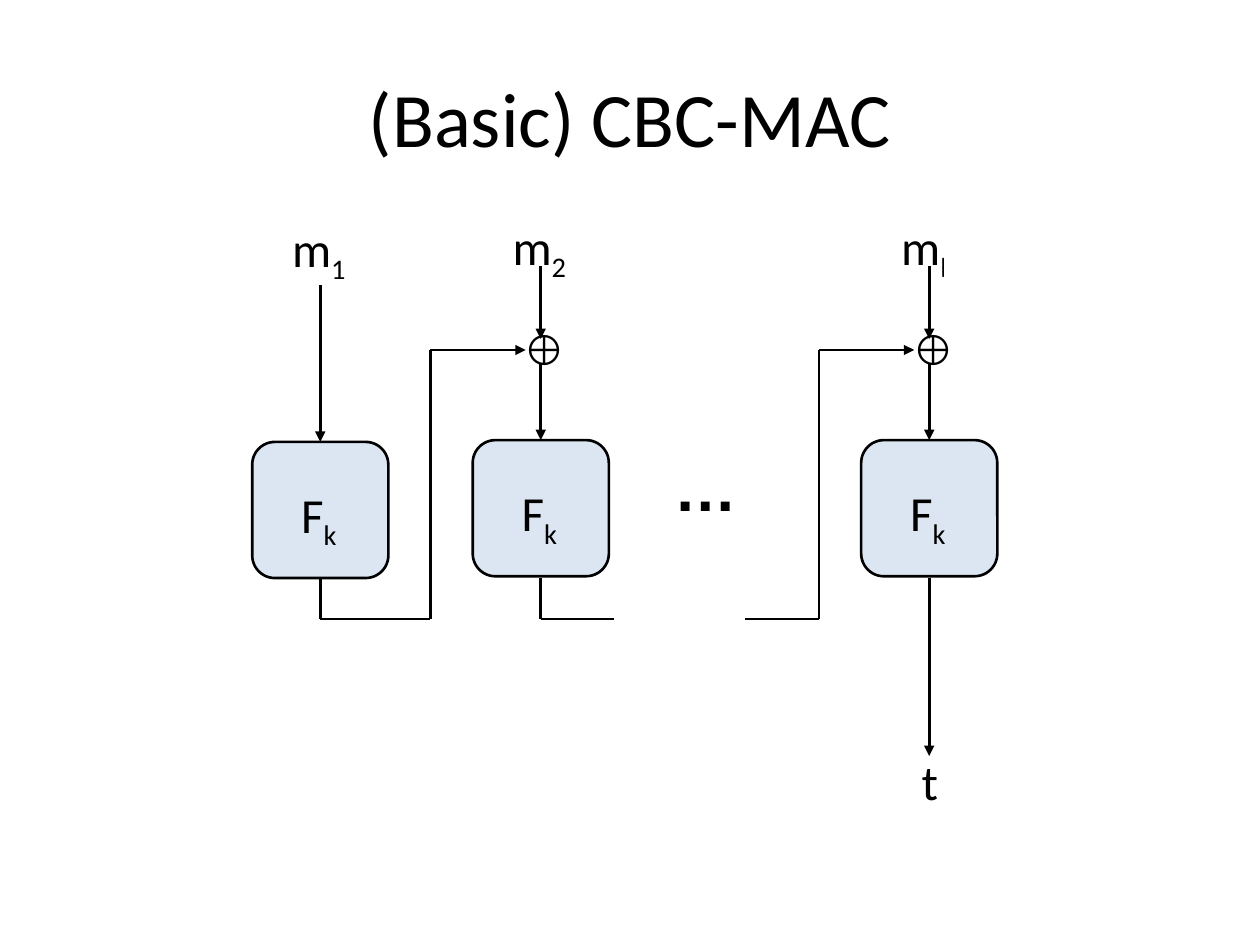
import dataclasses

import pptx
import pptx.dml.color
import pptx.enum.shapes
import pptx.enum.text
import pptx.oxml
import pptx.oxml.ns
import pptx.util

Pt = pptx.util.Pt


@dataclasses.dataclass(frozen=True)
class Theme:
    ink: str = "000000"
    block: str = "DCE6F2"
    font: str = "Calibri"
    symbol_font: str = "Arial"
    subscript_font: str = "Comic Neue"
    title: int = 44
    label: int = 28
    symbol: int = 24
    dots: int = 36
    line: float = 1.5


THEME = Theme()

# Shared geometry, in points
BLOCK = 77.8
COLUMNS = (183, 309, 531)
CHAIN_Y = 353.7
XOR_Y = 200


def color(value):
    return pptx.dml.color.RGBColor.from_string(value)


def add_span(para, text, size, font=THEME.font, bold=None, subscript=False):
    span = para.add_run()
    span.text = text
    span.font.name = font
    span.font.size = Pt(size)
    span.font.bold = bold
    span.font.color.rgb = color(THEME.ink)
    if subscript:
        span._r.get_or_add_rPr().set("baseline", "-25000")


def add_label(page, left, top, width, height, text, size=THEME.label,
              font=THEME.font, bold=None, subscript="", subscript_font=THEME.font):
    box = page.shapes.add_textbox(Pt(left), Pt(top), Pt(width), Pt(height))
    box.text_frame.word_wrap = False
    box.text_frame.auto_size = pptx.enum.text.MSO_AUTO_SIZE.SHAPE_TO_FIT_TEXT
    para = box.text_frame.paragraphs[0]
    add_span(para, text, size, font, bold)
    if subscript:
        add_span(para, subscript, size, subscript_font, subscript=True)


def add_line(page, x1, y1, x2, y2, arrow=False):
    line = page.shapes.add_connector(
        pptx.enum.shapes.MSO_CONNECTOR.STRAIGHT, Pt(x1), Pt(y1), Pt(x2), Pt(y2))
    line.line.color.rgb = color(THEME.ink)
    line.line.width = Pt(THEME.line)
    properties = line.element.spPr
    if arrow:
        outline = properties.find(pptx.oxml.ns.qn("a:ln"))
        outline.append(pptx.oxml.parse_xml(
            f'<a:tailEnd {pptx.oxml.ns.nsdecls("a")} type="triangle"/>'))
    properties.append(pptx.oxml.parse_xml(
        f'<a:effectLst {pptx.oxml.ns.nsdecls("a")}/>'))


def add_block(page, center, top):
    left = center - BLOCK / 2
    block = page.shapes.add_shape(
        pptx.enum.shapes.MSO_SHAPE.ROUNDED_RECTANGLE,
        Pt(left), Pt(top), Pt(BLOCK), Pt(BLOCK))
    block.adjustments[0] = 0.167
    block.shadow.inherit = False
    block.fill.solid()
    block.fill.fore_color.rgb = color(THEME.block)
    block.line.color.rgb = color(THEME.ink)
    block.line.width = Pt(THEME.line)
    add_label(page, left + 20.9, top + 20.9, 36, 41, "F", subscript="k")


def add_xor_stage(page, center, block_top):
    """Message arrow into the XOR symbol, then on into the block."""
    add_line(page, center, 152, center, 193.7, arrow=True)
    add_label(page, center - 16.7, 181.4, 33, 36.4, "⊕",
              THEME.symbol, THEME.symbol_font)
    add_line(page, center, 207.4, center, block_top, arrow=True)


def add_feedback(page, start, center):
    """Path from the chain line up and into the XOR of a column."""
    riser = center - 63
    add_line(page, start, CHAIN_Y, riser, CHAIN_Y)
    add_line(page, riser, CHAIN_Y, riser, XOR_Y)
    add_line(page, riser, XOR_Y, center - 8.6, XOR_Y, arrow=True)


def main():
    deck = pptx.Presentation()
    deck.slide_width, deck.slide_height = Pt(720), Pt(540)
    page = deck.slides.add_slide(deck.slide_layouts[5])
    first, second, last = COLUMNS

    # Title
    title = page.shapes.title
    title.left, title.top, title.width, title.height = Pt(36), Pt(21.6), Pt(648), Pt(90)
    title.text_frame.vertical_anchor = pptx.enum.text.MSO_ANCHOR.MIDDLE
    para = title.text_frame.paragraphs[0]
    para.alignment = pptx.enum.text.PP_ALIGN.CENTER
    add_span(para, "(Basic) CBC-MAC", THEME.title)

    # Blocks and their messages
    stages = (
        (first, 252.5, 121.2, "1", THEME.font),
        (second, 251.5, 120, "2", THEME.font),
        (last, 251.5, 120, "l", THEME.subscript_font),
    )
    for center, block_top, label_top, index, font in stages:
        add_block(page, center, block_top)
        add_label(page, center - 23.2, label_top, 46 if index != "l" else 43, 41,
                  "m", subscript=index, subscript_font=font)
        if center == first:
            add_line(page, center, 162.7, center, block_top, arrow=True)
        else:
            add_xor_stage(page, center, block_top)

    # Chaining from block to block
    for center in (first, second):
        add_line(page, center, 330.5, center, CHAIN_Y)
    add_feedback(page, first, second)
    add_line(page, second, CHAIN_Y, second + 42, CHAIN_Y)
    add_label(page, 378, 252.7, 51, 51, "…", THEME.dots, THEME.symbol_font, bold=True)
    add_feedback(page, last - 105, last)

    # Output tag
    add_line(page, last, 330.5, last, 432, arrow=True)
    add_label(page, last - 11.5, 426.2, 24, 41, "t")

    deck.save("out.pptx")


if __name__ == "__main__":
    main()
